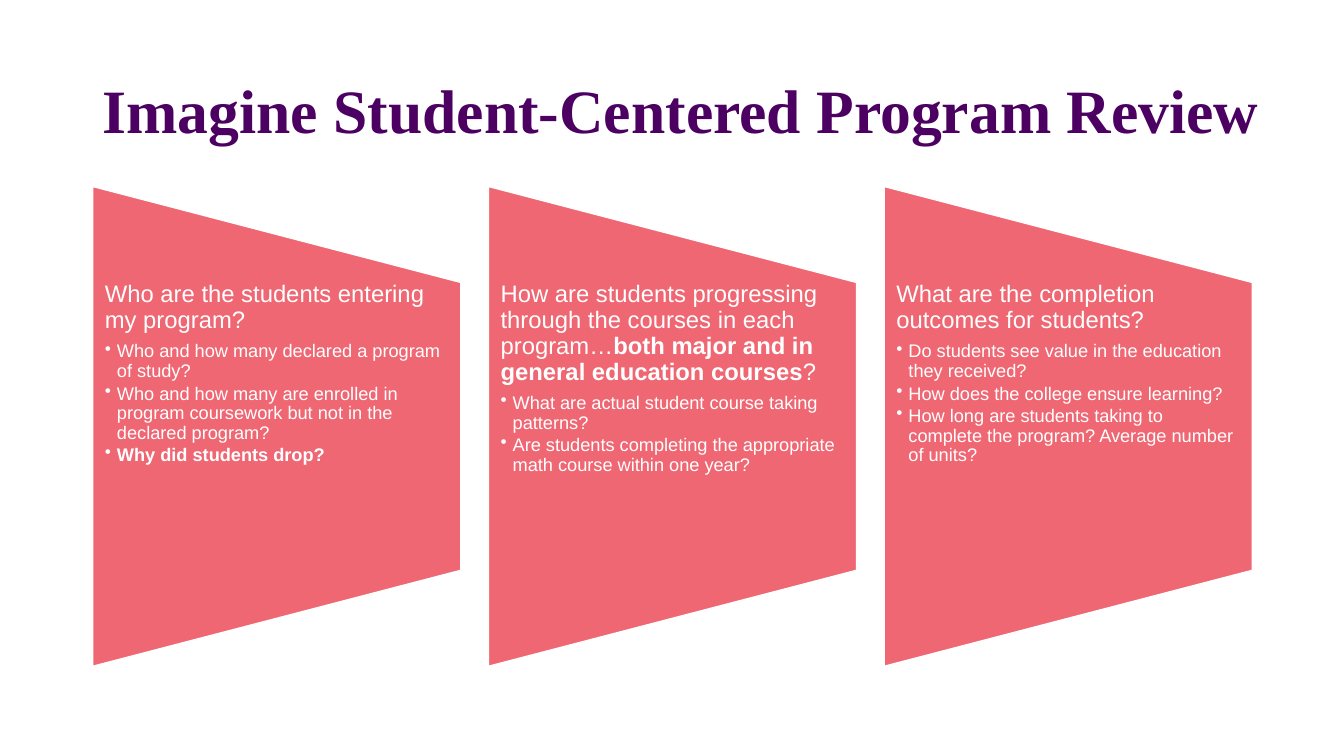
from dataclasses import dataclass

from lxml import etree
from pptx import Presentation, util as u
from pptx.dml.color import RGBColor
from pptx.enum import shapes, text
from pptx.oxml.ns import qn


@dataclass(frozen=True)
class Theme:
    plum: str = "4C0061"
    coral: str = "EF6773"
    white: str = "FFFFFF"
    serif: str = "Times New Roman"
    sans: str = "Arial"
    title: int = 44
    head: int = 17
    item: int = 13


@dataclass(frozen=True)
class Box:
    x: float
    y: float
    w: float
    h: float

    def emu(self):
        return [u.Inches(v) for v in (self.x, self.y, self.w, self.h)]


T = Theme()
LEFT, TOP = 0.92, 1.85
WIDE, TALL, STEP = 3.65, 4.76, 3.925

# Each panel: heading runs, then bullet items; a run is (words, bold)
PANELS = [
    ([("Who are the students entering my program?", False)],
     [("Who and how many declared a program of study?", False),
      ("Who and how many are enrolled in program coursework but not in the "
       "declared program?", False),
      ("Why did students drop?", True)]),
    ([("How are students progressing through the courses in each program…", False),
      ("both major and in general education courses", True),
      ("?", False)],
     [("What are actual student course taking patterns?", False),
      ("Are students completing the appropriate math course within one year?", False)]),
    ([("What are the completion outcomes for students?", False)],
     [("Do students see value in the education they received?", False),
      ("How does the college ensure learning?", False),
      ("How long are students taking to complete the program? "
       "Average number of units?", False)]),
]


def color(code):
    return RGBColor.from_string(code)


def add_run(para, words, size, face, tint, bold):
    run = para.add_run()
    run.text = words
    font = run.font
    font.size, font.name, font.bold = u.Pt(size), face, bold
    font.color.rgb = color(tint)


def add_frame(slide, box, side, edge, anchor):
    frame = slide.shapes.add_textbox(*box.emu()).text_frame
    frame.word_wrap = True
    frame.vertical_anchor = anchor
    frame.margin_left = frame.margin_right = u.Inches(side)
    frame.margin_top = frame.margin_bottom = u.Inches(edge)
    return frame


def add_bullet(para):
    para.level = 1
    props = para._p.get_or_add_pPr()
    props.set("marL", str(u.Inches(0.12)))
    props.set("indent", str(-u.Inches(0.12)))
    tint = etree.SubElement(props, qn("a:buClr"))
    etree.SubElement(tint, qn("a:srgbClr")).set("val", T.white)
    etree.SubElement(props, qn("a:buChar")).set("char", "•")


def draw_title(slide, box):
    frame = add_frame(slide, box, 0.1, 0.05, text.MSO_ANCHOR.MIDDLE)
    para = frame.paragraphs[0]
    para.line_spacing = 0.9
    add_run(para, "Imagine Student-Centered Program Review",
            T.title, T.serif, T.plum, True)


def draw_panel(slide, box, head, items):
    # Trapezoid on its side: a quarter turn about the centre of the box
    turned = Box(box.x + (box.w - box.h) / 2, box.y + (box.h - box.w) / 2,
                 box.h, box.w)
    shape = slide.shapes.add_shape(
        shapes.MSO_SHAPE.FLOWCHART_MANUAL_OPERATION, *turned.emu())
    shape.rotation = 270
    shape.shadow.inherit = False
    shape.fill.solid()
    shape.fill.fore_color.rgb = color(T.coral)
    shape.line.color.rgb = color(T.white)
    shape.line.width = u.Pt(1)

    # Text fills the middle three fifths, clear of the slanted sides
    inner = Box(box.x, box.y + box.h / 5, box.w, box.h * 3 / 5)
    frame = add_frame(slide, inner, 0.12, 0, text.MSO_ANCHOR.TOP)
    para = frame.paragraphs[0]
    para.line_spacing = 0.9
    for words, bold in head:
        add_run(para, words, T.head, T.sans, T.white, bold)
    for i, (words, bold) in enumerate(items):
        para = frame.add_paragraph()
        para.line_spacing = 0.9
        para.space_before = u.Pt(1.9 if i else 6)
        add_bullet(para)
        add_run(para, words, T.item, T.sans, T.white, bold)


def main():
    deck = Presentation()
    deck.slide_width, deck.slide_height = u.Inches(13.33), u.Inches(7.5)
    slide = deck.slides.add_slide(deck.slide_layouts[6])
    draw_title(slide, Box(LEFT, 0.4, 11.81, 1.45))
    for i, (head, items) in enumerate(PANELS):
        draw_panel(slide, Box(LEFT + i * STEP, TOP, WIDE, TALL), head, items)
    deck.save("out.pptx")


if __name__ == "__main__":
    main()
